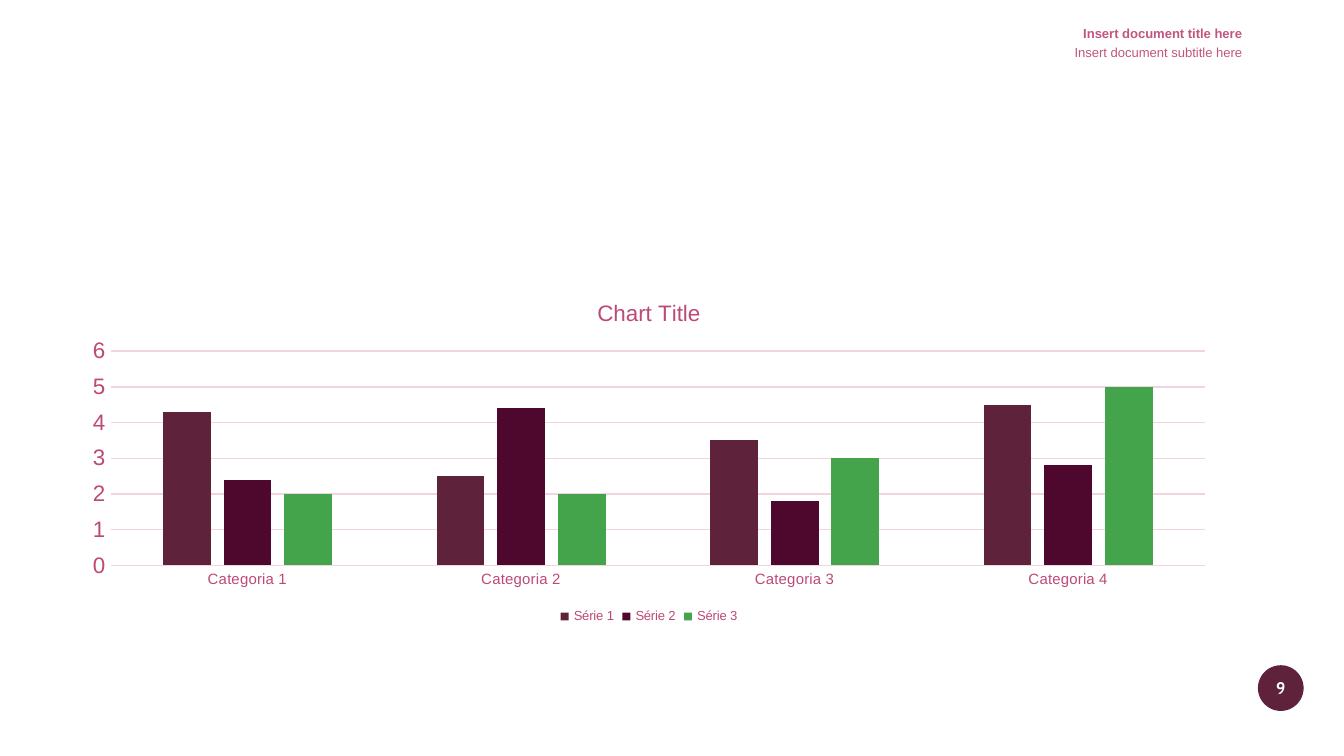
from dataclasses import dataclass

from pptx import Presentation
from pptx import util as u
from pptx.chart.data import CategoryChartData
from pptx.dml.color import RGBColor
from pptx.enum import chart as charts, shapes, text

Pt = u.Pt


@dataclass(frozen=True)
class Theme:
    """Colours, fonts and type sizes of the deck."""
    plum: str = "5E223A"
    wine: str = "4F082D"
    green: str = "43A44C"
    rose: str = "BD4977"
    heading: str = "C2557F"
    grid: str = "F0D5E0"
    white: str = "FFFFFF"
    body_font: str = "Arial"
    number_font: str = "Cabin"
    large: float = 12
    number: float = 9
    label: float = 8
    small: float = 7


THEME = Theme()


def style_font(font, size, color, name=THEME.body_font, bold=False):
    """Apply typeface, size, weight and colour to a font."""
    font.name, font.size, font.bold = name, Pt(size), bold
    font.color.rgb = RGBColor.from_string(color)


def style_line(line_format):
    """Give a chart line the pale grid colour."""
    line_format.color.rgb = RGBColor.from_string(THEME.grid)
    line_format.width = Pt(0.75)


def add_label(slide, box, words, alignment, insets, **font_style):
    """Place one line of text in a box of left, top, width and height."""
    label = slide.shapes.add_textbox(*map(Pt, box))
    frame = label.text_frame
    frame.word_wrap = False
    frame.margin_left = frame.margin_right = Pt(insets[0])
    frame.margin_top = frame.margin_bottom = Pt(insets[1])
    frame.text = words
    paragraph = frame.paragraphs[0]
    paragraph.alignment = alignment
    style_font(paragraph.runs[0].font, **font_style)


def add_header(slide, box):
    """Stack the document title and subtitle against the right of the box."""
    left, top, width, height = box
    lines = [("Insert document title here", True), ("Insert document subtitle here", False)]
    step = 10.2
    for index, (words, bold) in enumerate(lines):
        add_label(slide, (left, top + index * step, width, height - step), words,
                  text.PP_ALIGN.RIGHT, (7.2, 3.6),
                  size=THEME.small, color=THEME.heading, bold=bold)


def add_page_badge(slide, box, number):
    """Draw the round badge with the page number centred in it."""
    left, top, width, height = box
    badge = slide.shapes.add_shape(shapes.MSO_SHAPE.OVAL, *map(Pt, box))
    badge.shadow.inherit = False
    badge.fill.solid()
    badge.fill.fore_color.rgb = RGBColor.from_string(THEME.plum)
    badge.line.fill.background()
    number_height = 16.6
    add_label(slide, (left, top + (height - number_height) / 2, width, number_height),
              str(number), text.PP_ALIGN.CENTER, (5, 2.9),
              size=THEME.number, color=THEME.white, name=THEME.number_font, bold=True)


def add_column_chart(slide, box):
    """Fill the box with the clustered column chart."""
    series_rows = [
        ("Série 1", (4.3, 2.5, 3.5, 4.5), THEME.plum),
        ("Série 2", (2.4, 4.4, 1.8, 2.8), THEME.wine),
        ("Série 3", (2, 2, 3, 5), THEME.green),
    ]
    data = CategoryChartData()
    data.categories = [f"Categoria {index}" for index in range(1, 5)]
    for name, values, _ in series_rows:
        data.add_series(name, values)
    chart = slide.shapes.add_chart(
        charts.XL_CHART_TYPE.COLUMN_CLUSTERED, *map(Pt, box), data).chart
    style_font(chart.font, THEME.label, THEME.rose)

    chart.has_title = True
    title = chart.chart_title
    title.include_in_layout = False
    title.text_frame.text = "Chart Title"
    style_font(title.text_frame.paragraphs[0].runs[0].font, THEME.large, THEME.rose)

    plot = chart.plots[0]
    plot.gap_width, plot.overlap, plot.vary_by_categories = 219, -27, False
    for series, (_, _, color) in zip(plot.series, series_rows):
        series.format.fill.solid()
        series.format.fill.fore_color.rgb = RGBColor.from_string(color)
        series.invert_if_negative = False

    for axis, size in ((chart.category_axis, THEME.label), (chart.value_axis, THEME.large)):
        axis.major_tick_mark = axis.minor_tick_mark = charts.XL_TICK_MARK.NONE
        style_font(axis.tick_labels.font, size, THEME.rose)
    style_line(chart.category_axis.format.line)
    value_axis = chart.value_axis
    value_axis.minimum_scale, value_axis.maximum_scale, value_axis.major_unit = 0, 6, 1
    value_axis.format.line.fill.background()
    value_axis.has_major_gridlines = True
    style_line(value_axis.major_gridlines.format.line)

    chart.has_legend = True
    chart.legend.position = charts.XL_LEGEND_POSITION.BOTTOM
    chart.legend.include_in_layout = False
    style_font(chart.legend.font, THEME.small, THEME.rose)


def main():
    """Build the chart slide and save it."""
    presentation = Presentation()
    presentation.slide_width, presentation.slide_height = Pt(720), Pt(405)
    slide = presentation.slides.add_slide(presentation.slide_layouts[6])
    add_page_badge(slide, (673.9, 356.4, 24.5, 24.5), 9)
    add_column_chart(slide, (37.4, 150.5, 620.6, 186.5))
    add_header(slide, (566.5, 10, 106, 26))
    presentation.save("out.pptx")


if __name__ == "__main__":
    main()
